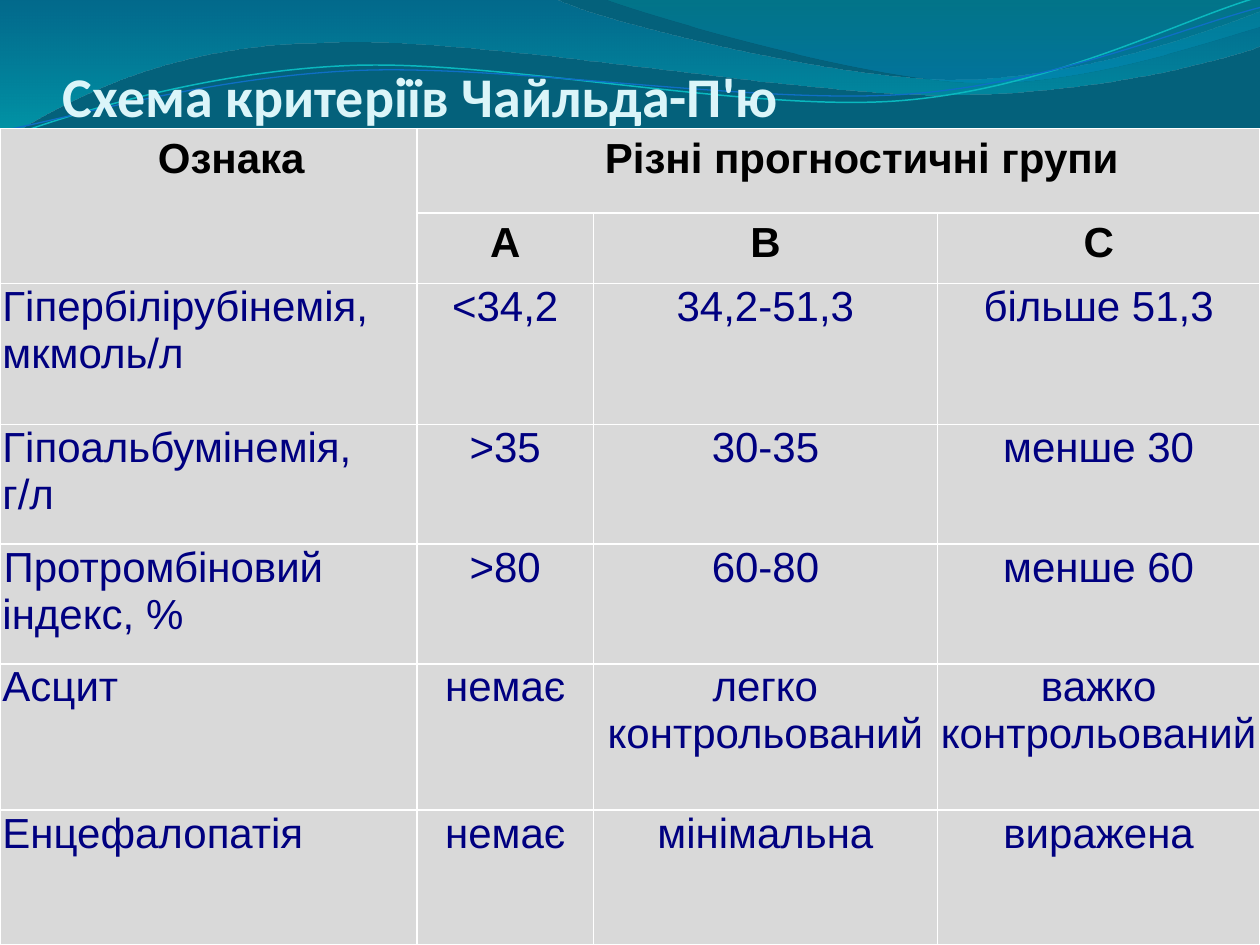
import math
from dataclasses import dataclass

from pptx import Presentation
from pptx import util as u
from pptx.dml.color import RGBColor
from pptx.enum import text
from pptx.oxml import parse_xml
from pptx.oxml.ns import nsdecls, qn
from pptx.oxml.xmlchemy import OxmlElement

Point = tuple[float, float]


@dataclass(frozen=True)
class Theme:
    background: str = "04617B"
    title: str = "DBF5F9"
    heading: str = "000000"
    body: str = "000080"
    cell: str = "D9D9D9"
    border: str = "FFFFFF"
    title_font: str = "Calibri"
    table_font: str = "Arial"
    title_size: int = 32
    table_size: int = 24


@dataclass(frozen=True)
class Stop:
    position: float
    color: str
    alpha: int


@dataclass(frozen=True)
class Wave:
    start: Point
    segments: list[tuple[Point, ...]]
    stops: tuple[Stop, ...] = ()
    line: str = ""
    width: float = 0
    rotation: float = 0
    center: Point = (0, 0)


@dataclass(frozen=True)
class Entry:
    row: int
    column: int
    lines: tuple[str, ...]
    heading: bool = False
    margin: float = 0
    indent: float = 0


THEME = Theme()

WAVES = [
    Wave((0, -0.01),
         [((4.4, -0.01),),
          ((4.76, 0.17), (6.64, 0.63), (7.58, 0.63)),
          ((8.53, 0.63), (9.58, 0.26), (10, 0.09)),
          ((10.01, 0.36),),
          ((9.83, 0.44), (8.7, 0.76), (7.46, 0.75)),
          ((6.22, 0.75), (3.82, 0.28), (2.57, 0.34)),
          ((1.29, 0.35), (0.46, 0.83), (-0.01, 1.13)),
          ((0, -0.01),)],
         stops=(Stop(0, "0074A1", 45), Stop(1, "00C6CF", 55))),
    Wave((4.79, -0.01),
         [((5.09, 0.11), (6.82, 0.62), (7.69, 0.65)),
          ((8.56, 0.69), (9.61, 0.32), (10, 0.21)),
          ((10, 0),),
          ((4.79, -0.01),)],
         stops=(Stop(0, "00A1A9", 30), Stop(0.8, "008BBF", 45))),
    Wave((0, 1.11),
         [((0.48, 0.93), (1.58, 0.57), (2.77, 0.52)),
          ((3.95, 0.47), (5.93, 0.89), (7.13, 0.8)),
          ((8.33, 0.71), (9.38, 0.15), (9.98, -0.02))],
         line="0AB8BF", width=0.85, rotation=357.3, center=(4.99, 0.58)),
    Wave((0, 1.04),
         [((0.47, 0.96), (1.64, 0.61), (2.83, 0.56)),
          ((4.03, 0.51), (5.97, 0.83), (7.17, 0.75)),
          ((8.36, 0.67), (9.41, 0.21), (10, 0.06))],
         line="0F6FC6", width=0.75, rotation=357.3, center=(5, 0.59)),
]

COLUMN_WIDTHS = [3.31, 1.4, 2.73, 2.56]
ROW_HEIGHTS = [0.67, 0.56, 1.12, 0.95, 0.95, 1.16, 1.07]
CRITERIA = [
    (("Гіпербілірубінемія,", "мкмоль/л"), "<34,2", "34,2-51,3", "більше 51,3"),
    (("Гіпоальбумінемія,", "г/л"), ">35", "30-35", "менше 30"),
    (("Протромбіновий індекс, %",), ">80", "60-80", "менше 60"),
    (("Асцит",), "немає", "легко контрольований", "важко контрольований"),
    (("Енцефалопатія",), "немає", "мінімальна", "виражена"),
]


def level(point: Point, wave: Wave) -> tuple[int, int]:
    angle = math.radians(-wave.rotation)
    x, y = point[0] - wave.center[0], point[1] - wave.center[1]
    return (u.Inches(wave.center[0] + x * math.cos(angle) - y * math.sin(angle)),
            u.Inches(wave.center[1] + x * math.sin(angle) + y * math.cos(angle)))


def bend(shape, segments: list[tuple[Point, ...]]) -> None:
    steps = iter(list(shape.element.spPr.iter(qn("a:lnTo"))))
    for segment in segments:
        parts = [next(steps) for _ in segment]
        if len(parts) == 3:
            curve = OxmlElement("a:cubicBezTo")
            parts[0].addprevious(curve)
            for part in parts:
                curve.append(part[0])
                part.getparent().remove(part)


def draw_wave(slide, wave: Wave) -> None:
    builder = slide.shapes.build_freeform(*level(wave.start, wave))
    builder.add_line_segments([level(point, wave) for segment in wave.segments
                               for point in segment], close=bool(wave.stops))
    shape = builder.convert_to_shape()
    bend(shape, wave.segments)
    shape.rotation = wave.rotation
    shape.shadow.inherit = False
    if not wave.stops:
        shape.fill.background()
        shape.line.color.rgb = RGBColor.from_string(wave.line)
        shape.line.width = u.Pt(wave.width)
        return
    shape.line.fill.background()
    shape.fill.gradient()
    shape.fill.gradient_angle = 270
    for target, stop in zip(shape.fill.gradient_stops, wave.stops):
        target.position = stop.position
        target.color.rgb = RGBColor.from_string(stop.color)
    colors = shape.element.spPr.iter(qn("a:srgbClr"))
    for color, stop in zip(list(colors), wave.stops):
        alpha = OxmlElement("a:alpha")
        alpha.set("val", str(stop.alpha * 1000))
        color.append(alpha)


def set_font(paragraph, name: str, size: int, color: str, bold: bool) -> None:
    paragraph.font.name = name
    paragraph.font.size = u.Pt(size)
    paragraph.font.bold = bold
    paragraph.font.color.rgb = RGBColor.from_string(color)


def draw_title(slide, wording: str) -> None:
    title = slide.shapes.add_textbox(u.Inches(0.5), u.Inches(0.16), u.Inches(9), u.Inches(0.86))
    frame = title.text_frame
    frame.word_wrap = True
    frame.vertical_anchor = text.MSO_ANCHOR.BOTTOM
    frame.margin_left = frame.margin_right = frame.margin_bottom = 0
    frame.margin_top = u.Inches(0.05)
    frame.text = wording
    set_font(frame.paragraphs[0], THEME.title_font, THEME.title_size, THEME.title, True)


def style_cell(cell) -> None:
    cell.margin_left = cell.margin_right = u.Inches(0.02)
    cell.margin_top = cell.margin_bottom = 0
    cell.fill.solid()
    cell.fill.fore_color.rgb = RGBColor.from_string(THEME.cell)
    properties = cell._tc.get_or_add_tcPr()
    for position, side in enumerate(("lnL", "lnR", "lnT", "lnB")):
        properties.insert(position, parse_xml(
            f'<a:{side} {nsdecls("a")} w="{u.Pt(1)}"><a:solidFill>'
            f'<a:srgbClr val="{THEME.border}"/></a:solidFill></a:{side}>'))


def fill_cell(table, entry: Entry) -> None:
    frame = table.cell(entry.row, entry.column).text_frame
    frame.text = "\n".join(entry.lines)
    centred = entry.heading or entry.column > 0
    for paragraph in frame.paragraphs:
        paragraph.alignment = text.PP_ALIGN.CENTER if centred else text.PP_ALIGN.LEFT
        if entry.heading:
            paragraph.line_spacing = 1.15
        for key, length in (("marL", entry.margin), ("indent", entry.indent)):
            paragraph._p.get_or_add_pPr().set(key, str(u.Inches(length)))
        set_font(paragraph, THEME.table_font, THEME.table_size,
                 THEME.heading if entry.heading else THEME.body, entry.heading)


def draw_table(slide) -> None:
    table = slide.shapes.add_table(len(ROW_HEIGHTS), len(COLUMN_WIDTHS), 0, u.Inches(1.02),
                                   u.Inches(10), u.Inches(6.48)).table
    table.first_row = table.horz_banding = False
    for column, width in zip(table.columns, COLUMN_WIDTHS):
        column.width = u.Inches(width)
    for row, height in zip(table.rows, ROW_HEIGHTS):
        row.height = u.Inches(height)
    for cell in table.iter_cells():
        style_cell(cell)
    table.cell(0, 0).merge(table.cell(1, 0))
    table.cell(0, 1).merge(table.cell(0, 3))

    entries = [Entry(0, 0, ("Ознака",), True, 0.36),
               Entry(0, 1, ("Різні прогностичні групи",), True, 0.37)]
    entries += [Entry(1, column, (group,), True) for column, group in enumerate("АВС", 1)]
    for row, (sign, *values) in enumerate(CRITERIA, 2):
        entries.append(Entry(row, 0, sign, indent=0.01 if row == 4 else 0))
        entries += [Entry(row, column, (value,)) for column, value in enumerate(values, 1)]
    for entry in entries:
        fill_cell(table, entry)


def main() -> None:
    deck = Presentation()
    deck.slide_width, deck.slide_height = u.Inches(10), u.Inches(7.5)
    slide = deck.slides.add_slide(deck.slide_layouts[6])
    slide.background.fill.solid()
    slide.background.fill.fore_color.rgb = RGBColor.from_string(THEME.background)
    for wave in WAVES:
        draw_wave(slide, wave)
    draw_title(slide, "Схема критеріїв Чайльда-П'ю")
    draw_table(slide)
    deck.save("out.pptx")


if __name__ == "__main__":
    main()
